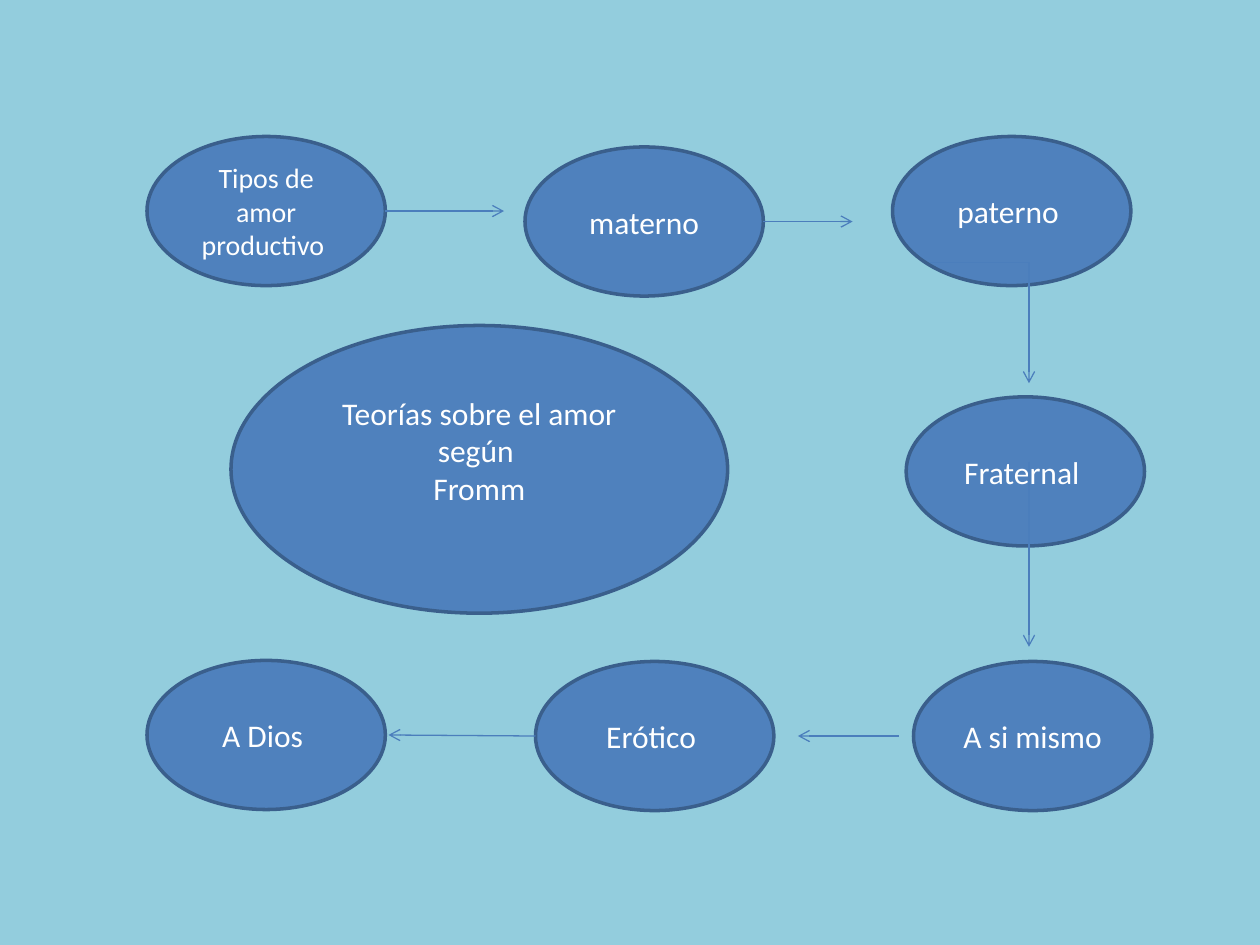
from dataclasses import dataclass

from lxml import etree
from pptx import Presentation
from pptx.dml.color import RGBColor
from pptx.enum.shapes import MSO_CONNECTOR, MSO_SHAPE
from pptx.enum.text import MSO_ANCHOR, PP_ALIGN
from pptx.oxml.ns import qn
from pptx.util import Inches, Pt

OVAL = MSO_SHAPE.OVAL
STRAIGHT, ELBOW = MSO_CONNECTOR.STRAIGHT, MSO_CONNECTOR.ELBOW
CENTER, MIDDLE = PP_ALIGN.CENTER, MSO_ANCHOR.MIDDLE
SLIDE_W, SLIDE_H = Inches(10), Inches(7.5)
COLUMNS, ROWS = 120, 90


@dataclass(frozen=True)
class Theme:
    background: RGBColor = RGBColor(0x93, 0xCD, 0xDD)
    fill: RGBColor = RGBColor(0x4F, 0x81, 0xBD)
    outline: RGBColor = RGBColor(0x3A, 0x5F, 0x8C)
    arrow: RGBColor = RGBColor(0x4B, 0x7E, 0xBC)
    text: RGBColor = RGBColor(0xFF, 0xFF, 0xFF)
    font: str = "Calibri"
    size: int = 18
    small: int = 16
    outline_width: float = 2
    arrow_width: float = 0.75


THEME = Theme()


@dataclass(frozen=True)
class Bubble:
    """An ellipse whose place and size are columns and rows of the grid."""
    text: str
    col: float
    row: float
    cols: float = 22.7
    rows: float = 14.2
    size: int = THEME.size
    bottom_inset: float = 0.05

    @property
    def right(self) -> float:
        return self.col + self.cols

    @property
    def middle(self) -> float:
        return self.row + self.rows / 2


@dataclass(frozen=True)
class Arrow:
    start: tuple[float, float]
    end: tuple[float, float]
    bent: bool = False


TYPES = Bubble("Tipos de amor productivo ", 14, 13, size=THEME.small)
MATERNAL = Bubble("materno", 50, 14)
PATERNAL = Bubble("paterno ", 85, 13)
FRATERNAL = Bubble("Fraternal ", 86.3, 37.8)
SELF = Bubble("A si mismo ", 87, 63)
EROTIC = Bubble("Erótico ", 51, 63)
GOD = Bubble("A Dios ", 14, 62.9)
THEORIES = Bubble("Teorías sobre el amor según \nFromm", 22, 31, 47.3, 27.4,
                  bottom_inset=0.35)
BUBBLES = (TYPES, MATERNAL, PATERNAL, FRATERNAL, SELF, EROTIC, GOD, THEORIES)

DOWN_COL = 98
ARROWS = (
    Arrow((TYPES.right, TYPES.middle), (48, TYPES.middle)),
    Arrow((MATERNAL.right, MATERNAL.middle), (81.2, MATERNAL.middle)),
    Arrow((88.6, 25), (DOWN_COL, 36.5), bent=True),
    Arrow((DOWN_COL, 44), (DOWN_COL, 61.6)),
    Arrow((85.6, SELF.middle), (76, SELF.middle)),
    Arrow((EROTIC.col, EROTIC.middle), (37, GOD.middle)),
)


def x(cols: float) -> int:
    return round(SLIDE_W * cols / COLUMNS)


def y(rows: float) -> int:
    return round(SLIDE_H * rows / ROWS)


def write(frame, text: str, *, size: int, color: RGBColor = THEME.text,
          font: str = THEME.font, bottom_inset: float = 0.05) -> None:
    frame.word_wrap = True
    frame.vertical_anchor = MIDDLE
    frame.margin_bottom = Inches(bottom_inset)
    frame.text = text
    for paragraph in frame.paragraphs:
        paragraph.alignment = CENTER
        for run in paragraph.runs:
            run.font.name = font
            run.font.size = Pt(size)
            run.font.color.rgb = color


def draw_bubble(slide, bubble: Bubble) -> None:
    oval = slide.shapes.add_shape(OVAL, x(bubble.col), y(bubble.row),
                                  x(bubble.cols), y(bubble.rows))
    oval.shadow.inherit = False
    oval.fill.solid()
    oval.fill.fore_color.rgb = THEME.fill
    oval.line.color.rgb = THEME.outline
    oval.line.width = Pt(THEME.outline_width)
    write(oval.text_frame, bubble.text, size=bubble.size,
          bottom_inset=bubble.bottom_inset)


def draw_arrow(slide, arrow: Arrow) -> None:
    (x1, y1), (x2, y2) = arrow.start, arrow.end
    connector = slide.shapes.add_connector(ELBOW if arrow.bent else STRAIGHT,
                                           x(x1), y(y1), x(x2), y(y2))
    connector.line.color.rgb = THEME.arrow
    connector.line.width = Pt(THEME.arrow_width)
    properties = connector.line._get_or_add_ln().getparent()
    if arrow.bent:  # a single corner: across, then down
        properties.find(qn("a:prstGeom")).set("prst", "bentConnector2")
    etree.SubElement(properties.find(qn("a:ln")), qn("a:tailEnd"), type="arrow")
    etree.SubElement(properties, qn("a:effectLst"))


def main() -> None:
    deck = Presentation()
    deck.slide_width, deck.slide_height = SLIDE_W, SLIDE_H
    slide = deck.slides.add_slide(deck.slide_layouts[6])
    slide.background.fill.solid()
    slide.background.fill.fore_color.rgb = THEME.background
    for bubble in BUBBLES:
        draw_bubble(slide, bubble)
    for arrow in ARROWS:
        draw_arrow(slide, arrow)
    deck.save("out.pptx")


if __name__ == "__main__":
    main()
